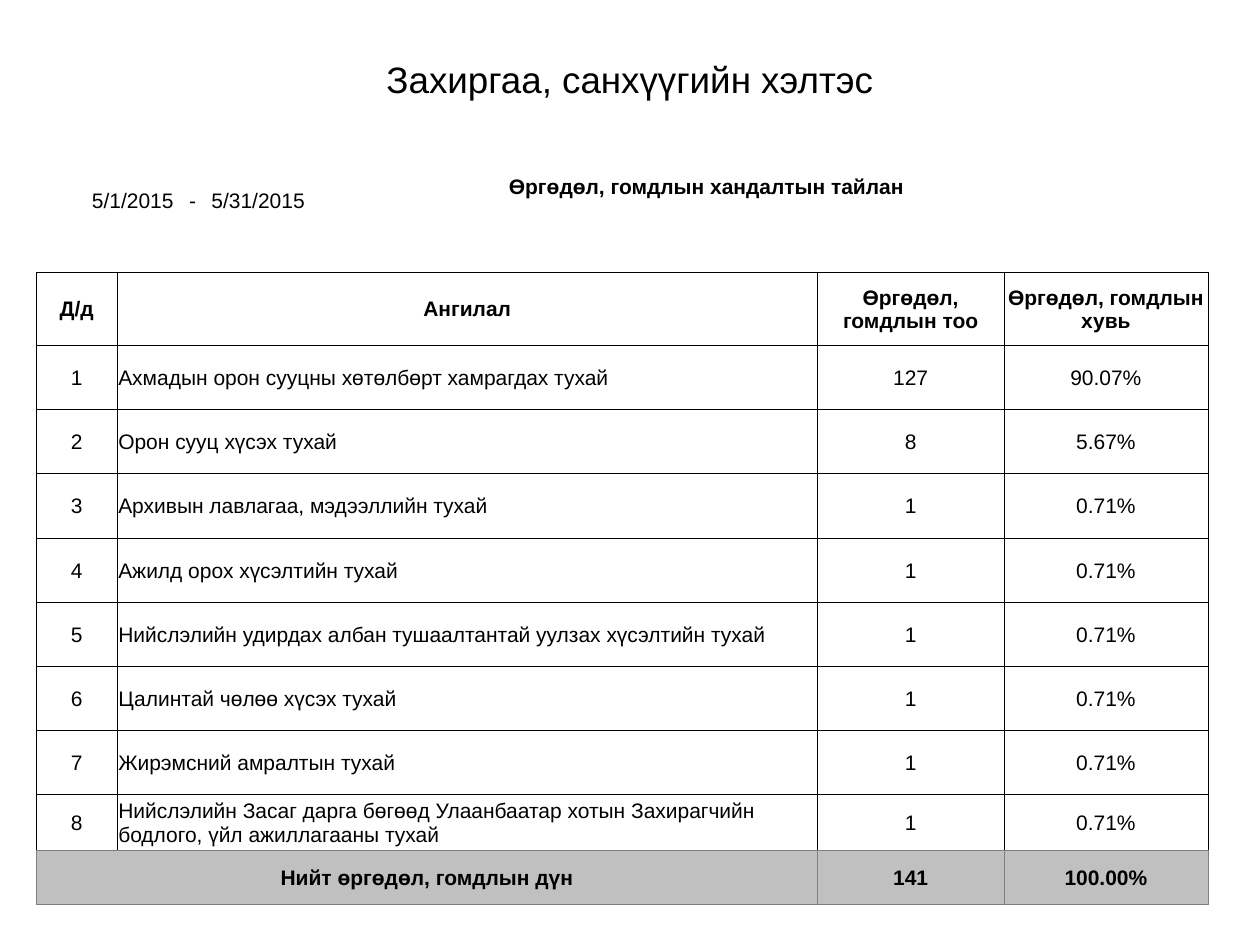
from dataclasses import dataclass

from lxml.etree import SubElement
from pptx import Presentation
from pptx.dml.color import RGBColor as Color
from pptx.enum.text import MSO_ANCHOR as Anchor, PP_ALIGN as Align
from pptx.oxml.ns import qn
from pptx.util import Pt


@dataclass(frozen=True)
class Theme:
    font: str = "Arial"
    ink: str = "000000"
    paper: str = "FFFFFF"
    total_fill: str = "C0C0C0"
    total_line: str = "808080"
    title_size: float = 21
    body_size: float = 12
    line_width: float = 0.5
    inset: float = 0.72


COLUMN_WIDTHS = [46, 15.8, 17.3, 13, 7.2, 79.9, 15.8, 251.3, 106.6, 18, 5, 88.6, 5]
ROW_HEIGHTS = [31.7, 16.6, 16.6, 41.8] + [36.7] * 7 + [31.7, 31]
HEADER_ROW, FIRST_ROW = 3, 4
TOTAL_ROW = len(ROW_HEIGHTS) - 1
NUMBER, CATEGORY, COUNT, SHARE = 0, 1, 8, 9
LAST_COLUMN = len(COLUMN_WIDTHS) - 1

HEADINGS = ("Д/д", "Ангилал", "Өргөдөл, гомдлын тоо", "Өргөдөл, гомдлын хувь")
REQUESTS = [
    ("Ахмадын орон сууцны хөтөлбөрт хамрагдах тухай", "127", "90.07%"),
    ("Орон сууц хүсэх тухай", "8", "5.67%"),
    ("Архивын лавлагаа, мэдээллийн тухай", "1", "0.71%"),
    ("Ажилд орох хүсэлтийн тухай", "1", "0.71%"),
    ("Нийслэлийн удирдах албан тушаалтантай уулзах хүсэлтийн тухай", "1", "0.71%"),
    ("Цалинтай чөлөө хүсэх тухай", "1", "0.71%"),
    ("Жирэмсний амралтын тухай", "1", "0.71%"),
    ("Нийслэлийн Засаг дарга бөгөөд Улаанбаатар хотын Захирагчийн бодлого, "
     "үйл ажиллагааны тухай", "1", "0.71%"),
]
TOTALS = ("Нийт өргөдөл, гомдлын дүн", "141", "100.00%")


def apply_format(target, values):
    for name, value in values.items():
        setattr(target, name, value)


class ReportSlide:
    def __init__(self, presentation, theme):
        self.theme = theme
        self.slide = presentation.slides.add_slide(presentation.slide_layouts[5])

    def add_text(self, paragraph, text, size, bold=False, align=Align.CENTER):
        paragraph.alignment = align
        run = paragraph.add_run()
        run.text = text
        apply_format(run.font, {"name": self.theme.font, "size": Pt(size), "bold": bold})
        run.font.color.rgb = Color.from_string(self.theme.ink)

    def title(self, text, left, top, width, height):
        shape = self.slide.shapes.title
        apply_format(shape, {"left": Pt(left), "top": Pt(top),
                             "width": Pt(width), "height": Pt(height)})
        apply_format(shape.text_frame, {"vertical_anchor": Anchor.MIDDLE,
                                        "margin_left": Pt(18), "word_wrap": True})
        paragraph = shape.text_frame.paragraphs[0]
        paragraph.line_spacing = 0.9
        self.add_text(paragraph, text, self.theme.title_size)

    def table(self, left, top, widths, heights):
        frame = self.slide.shapes.add_table(
            len(heights), len(widths), Pt(left), Pt(top), Pt(sum(widths)), Pt(sum(heights)))
        table = frame.table
        apply_format(table, {"first_row": False, "horz_banding": False})
        for column, width in zip(table.columns, widths):
            column.width = Pt(width)
        for row, height in zip(table.rows, heights):
            row.height = Pt(height)
        return table

    def borders(self, cell, colors):
        """Draw the sides named in colors (L, R, T, B) and clear the others."""
        properties = cell._tc.get_or_add_tcPr()
        for side in "LRTB":
            line = SubElement(properties, qn(f"a:ln{side}"), w=str(Pt(self.theme.line_width)))
            if side in colors:
                fill = SubElement(line, qn("a:solidFill"))
                SubElement(fill, qn("a:srgbClr"), val=colors[side])
            else:
                SubElement(line, qn("a:noFill"))

    def row_style(self, row):
        """Return the fill and the border colours of one table row."""
        theme = self.theme
        if row == TOTAL_ROW:
            return theme.total_fill, dict.fromkeys("LRTB", theme.total_line)
        if row >= HEADER_ROW:
            bottom = theme.total_line if row == TOTAL_ROW - 1 else theme.ink
            return theme.paper, {**dict.fromkeys("LRT", theme.ink), "B": bottom}
        return theme.paper, {"B": theme.ink} if row == HEADER_ROW - 1 else {}

    def style_cells(self, table):
        for index, row in enumerate(table.rows):
            fill, lines = self.row_style(index)
            for cell in row.cells:
                self.borders(cell, lines)
                cell.fill.solid()
                cell.fill.fore_color.rgb = Color.from_string(fill)
                inset = Pt(self.theme.inset)
                apply_format(cell, {"vertical_anchor": Anchor.MIDDLE, "margin_left": inset,
                                    "margin_right": inset, "margin_top": inset,
                                    "margin_bottom": 0})
                # Empty cells need the body size too, or they stretch the low rows.
                SubElement(cell.text_frame.paragraphs[0]._p, qn("a:endParaRPr"),
                           sz=str(int(self.theme.body_size * 100)))

    def cell(self, table, start, end, text="", **style):
        """Merge the cells from start to end, both (row, column), and add text."""
        origin = table.cell(*start)
        if start != end:
            origin.merge(table.cell(*end))
        if text:
            self.add_text(origin.text_frame.paragraphs[0], text, self.theme.body_size, **style)

    def record(self, table, row, texts, starts, bold=False, category_align=Align.CENTER):
        """Fill one row; each text takes the columns up to the next start."""
        ends = [start - 1 for start in starts[1:]] + [LAST_COLUMN]
        for text, start, end in zip(texts, starts, ends):
            align = category_align if start == CATEGORY else Align.CENTER
            self.cell(table, (row, start), (row, end), text, bold=bold, align=align)


def main():
    presentation = Presentation()
    apply_format(presentation, {"slide_width": Pt(720), "slide_height": Pt(540)})
    report = ReportSlide(presentation, Theme())
    report.title("Захиргаа, санхүүгийн хэлтэс", 10, 13.7, 689, 65.5)

    table = report.table(20.9, 90.7, COLUMN_WIDTHS, ROW_HEIGHTS)
    report.style_cells(table)
    report.cell(table, (0, 0), (1, 2), "5/1/2015", align=Align.RIGHT)
    report.cell(table, (0, 3), (1, 4), "-")
    report.cell(table, (0, 5), (1, 5), "5/31/2015", align=Align.LEFT)
    report.cell(table, (0, 7), (0, 9), "Өргөдөл, гомдлын хандалтын тайлан", bold=True)
    report.cell(table, (0, 11), (1, 11))

    starts = (NUMBER, CATEGORY, COUNT, SHARE)
    report.record(table, HEADER_ROW, HEADINGS, starts, bold=True)
    for number, request in enumerate(REQUESTS, 1):
        report.record(table, FIRST_ROW + number - 1, (str(number), *request), starts,
                      category_align=Align.LEFT)
    report.record(table, TOTAL_ROW, TOTALS, (NUMBER, COUNT, SHARE), bold=True)

    presentation.save("out.pptx")


if __name__ == "__main__":
    main()
